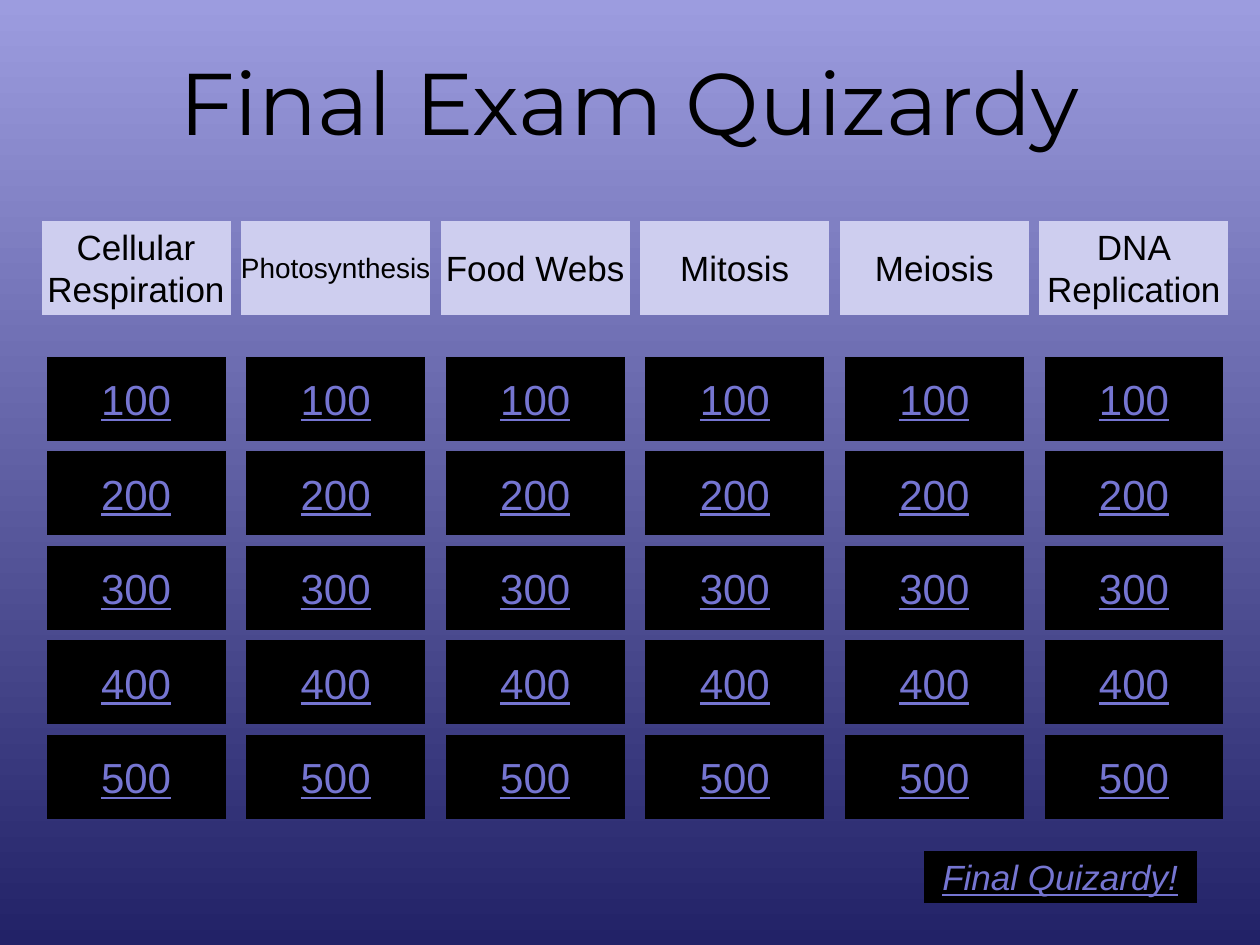
from dataclasses import dataclass

from pptx import Presentation
from pptx.dml.color import RGBColor
from pptx.enum.shapes import MSO_SHAPE
from pptx.enum.text import MSO_ANCHOR, PP_ALIGN
from pptx.util import Inches, Pt

BUTTON = MSO_SHAPE.ACTION_BUTTON_CUSTOM
MIDDLE = MSO_ANCHOR.MIDDLE
CENTER = PP_ALIGN.CENTER


@dataclass(frozen=True)
class Theme:
    sky: str = "9C9CDF"
    night: str = "222267"
    header_fill: str = "CECEEF"
    tile_fill: str = "000000"
    ink: str = "000000"
    link: str = "7575D1"
    title_font: str = "Montserrat"
    body_font: str = "Arial"
    title_size: int = 50
    header_size: int = 20
    small_header_size: int = 16
    tile_size: int = 24
    final_size: int = 20


THEME = Theme()

# Category lines and type size, one entry per column
CATEGORIES = [
    (["Cellular", "Respiration"], THEME.header_size),
    (["Photosynthesis"], THEME.small_header_size),
    (["Food Webs"], THEME.header_size),
    (["Mitosis"], THEME.header_size),
    (["Meiosis"], THEME.header_size),
    (["DNA", "Replication"], THEME.header_size),
]
POINTS = [100, 200, 300, 400, 500]

# Board grid, in inches
BOARD_LEFT, LAST_LEFT = 0.33, 8.25
COLUMN_STEP = (LAST_LEFT - BOARD_LEFT) / (len(CATEGORIES) - 1)
HEADER_TOP, HEADER_WIDTH, HEADER_HEIGHT = 1.75, 1.5, 0.75
TILE_TOP, TILE_WIDTH, TILE_HEIGHT = 2.83, 1.42, 0.67
ROW_STEP = 0.75
TILE_INSET = (HEADER_WIDTH - TILE_WIDTH) / 2


def paint_background(page):
    fill = page.background.fill
    fill.gradient()
    fill.gradient_angle = 270
    for stop, color in zip(fill.gradient_stops, (THEME.sky, THEME.night)):
        stop.color.rgb = RGBColor.from_string(color)


def write_lines(box, lines, size, color, font=THEME.body_font,
                underline=None, italic=None, wrap=False):
    frame = box.text_frame
    frame.word_wrap = wrap
    frame.vertical_anchor = MIDDLE
    for index, line in enumerate(lines):
        para = frame.add_paragraph() if index else frame.paragraphs[0]
        para.alignment = CENTER
        span = para.add_run()
        span.text = line
        span.font.name = font
        span.font.size = Pt(size)
        span.font.color.rgb = RGBColor.from_string(color)
        span.font.underline = underline
        span.font.italic = italic


def add_title(page, text):
    box = page.shapes.add_textbox(Inches(0.33), Inches(0.17), Inches(9.33), Inches(1.25))
    write_lines(box, [text], THEME.title_size, THEME.ink, THEME.title_font, wrap=True)


def add_button(page, left, top, width, height, fill):
    box = page.shapes.add_shape(
        BUTTON, Inches(left), Inches(top), Inches(width), Inches(height))
    box.shadow.inherit = False
    box.fill.solid()
    box.fill.fore_color.rgb = RGBColor.from_string(fill)
    box.line.fill.background()
    return box


def add_header(page, left, lines, size):
    box = add_button(page, left, HEADER_TOP, HEADER_WIDTH, HEADER_HEIGHT, THEME.header_fill)
    write_lines(box, lines, size, THEME.ink)


def add_link_tile(page, left, top, width, height, text, size, italic=None):
    box = add_button(page, left, top, width, height, THEME.tile_fill)
    write_lines(box, [text], size, THEME.link, underline=True, italic=italic)


def main():
    deck = Presentation()
    deck.slide_width, deck.slide_height = Inches(10), Inches(7.5)
    page = deck.slides.add_slide(deck.slide_layouts[6])
    paint_background(page)
    add_title(page, "Final Exam Quizardy")

    # Category headers with their point tiles
    for column, (lines, size) in enumerate(CATEGORIES):
        left = BOARD_LEFT + column * COLUMN_STEP
        add_header(page, left, lines, size)
        for row, points in enumerate(POINTS):
            add_link_tile(page, left + TILE_INSET, TILE_TOP + row * ROW_STEP,
                          TILE_WIDTH, TILE_HEIGHT, str(points), THEME.tile_size)

    # Closing round
    add_link_tile(page, 7.33, 6.75, 2.17, 0.42, "Final Quizardy!",
                  THEME.final_size, italic=True)
    deck.save("out.pptx")


if __name__ == "__main__":
    main()
